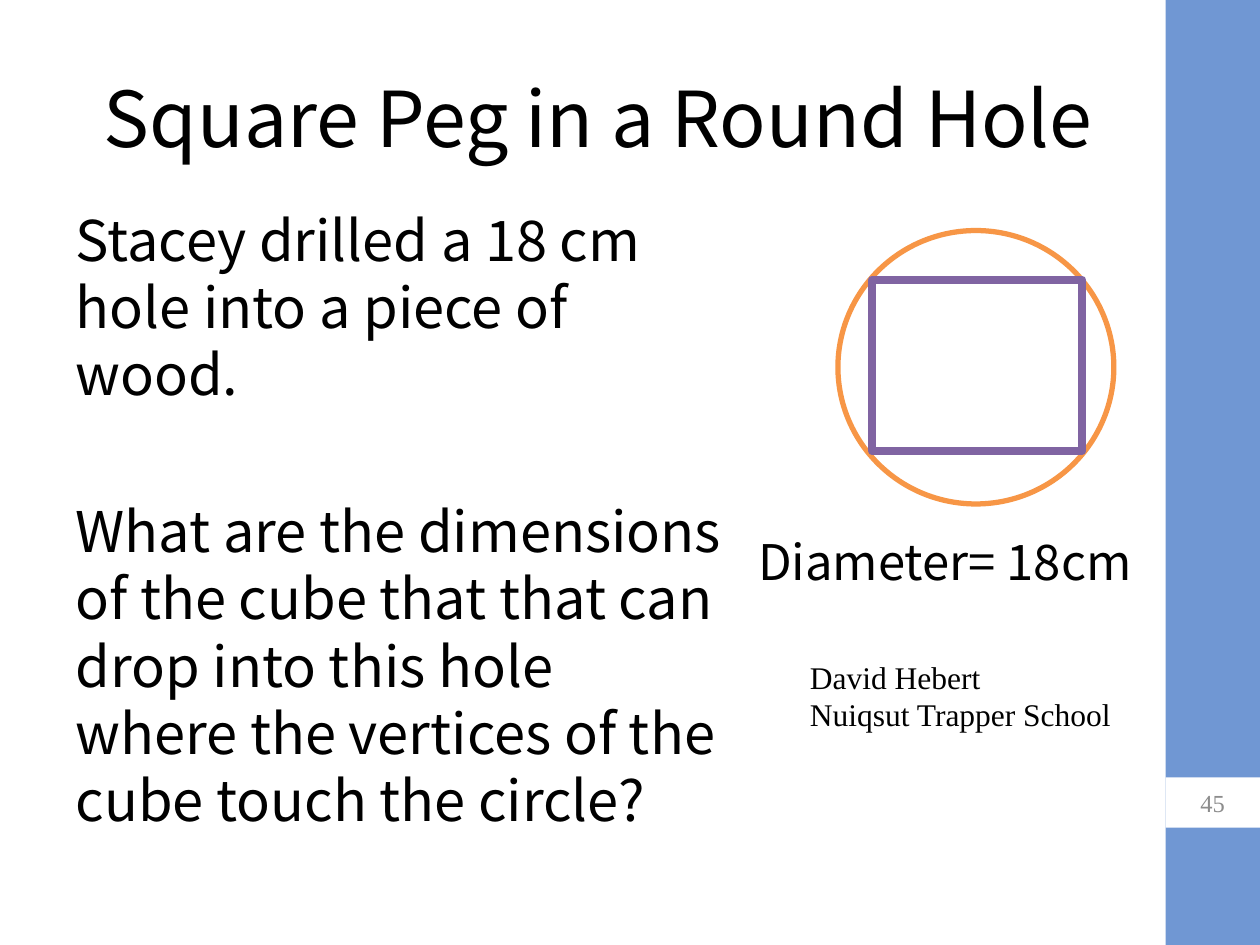
from pptx import Presentation
from pptx.dml.color import RGBColor
from pptx.enum.shapes import MSO_SHAPE
from pptx.enum.text import MSO_ANCHOR, MSO_AUTO_SIZE, PP_ALIGN
from pptx.util import Inches, Pt

SANS, SERIF = "Noto Sans CJK TC", "Times New Roman"
TITLE = "Square Peg in a Round Hole"
PROBLEM = [
    "Stacey drilled a 18 cm hole into a piece of wood.",
    "What are the dimensions of the cube that that can drop into this hole "
    "where the vertices of the cube touch the circle?",
]
CREDIT = ["David Hebert", "Nuiqsut Trapper School"]
LINE_HEIGHT = 1.2  # times the text size
PARAGRAPH_GAP = 51.2  # points
SIDEBAR_LEFT, SIDEBAR_WIDTH = 9.25, 0.75


def color(value):
    return RGBColor.from_string(value)


def place(shape, box):
    for name, value in zip(("left", "top", "width", "height"), box):
        setattr(shape, name, Inches(value))


def write(shape, lines, size, font, ink="000000", align=PP_ALIGN.LEFT,
          anchor=MSO_ANCHOR.TOP, gap=0):
    frame = shape.text_frame
    frame.text = "\n".join(lines)
    frame.word_wrap = True
    frame.auto_size = MSO_AUTO_SIZE.NONE
    frame.vertical_anchor = anchor
    for index, paragraph in enumerate(frame.paragraphs):
        layout = {"alignment": align, "space_before": Pt(gap if index else 0)}
        if font == SANS:
            layout["line_spacing"] = Pt(size * LINE_HEIGHT)
        for name, value in layout.items():
            setattr(paragraph, name, value)
        run_font = paragraph.runs[0].font
        run_font.name, run_font.size = font, Pt(size)
        run_font.color.rgb = color(ink)


def add_shape(slide, kind, box, fill, line=None, width=0):
    shape = slide.shapes.add_shape(kind, *map(Inches, box))
    shape.shadow.inherit = False
    shape.fill.solid()
    shape.fill.fore_color.rgb = color(fill)
    if line:
        shape.line.color.rgb = color(line)
        shape.line.width = Pt(width)
    else:
        shape.line.fill.background()
    return shape


def add_text(slide, box, *content):
    write(slide.shapes.add_textbox(*map(Inches, box)), *content)


def remove_bullets(shape):
    for paragraph in shape.text_frame.paragraphs:
        properties = paragraph._p.get_or_add_pPr()
        properties.set("marL", "0")
        properties.set("indent", "0")
        bullet = properties.makeelement(
            "{http://schemas.openxmlformats.org/drawingml/2006/main}buNone", {})
        properties.append(bullet)


def main():
    presentation = Presentation()
    presentation.slide_width, presentation.slide_height = Inches(10), Inches(7.5)
    slide = presentation.slides.add_slide(presentation.slide_layouts[1])

    add_shape(slide, MSO_SHAPE.RECTANGLE,
              (SIDEBAR_LEFT, 0, SIDEBAR_WIDTH, 7.5), "7097D3")
    page_number = add_shape(slide, MSO_SHAPE.RECTANGLE,
                            (SIDEBAR_LEFT, 6.17, SIDEBAR_WIDTH, 0.4), "FFFFFF")
    write(page_number, ["45"], 14, SERIF, "8C8C8C", PP_ALIGN.CENTER,
          MSO_ANCHOR.MIDDLE)

    title, body = slide.placeholders
    place(title, (0.5, 0.3, 8.5, 1.25))
    write(title, [TITLE], 44, SANS, align=PP_ALIGN.CENTER,
          anchor=MSO_ANCHOR.MIDDLE)
    place(body, (0.5, 1.58, 5.33, 5.42))
    write(body, PROBLEM, 32, SANS, gap=PARAGRAPH_GAP)
    remove_bullets(body)

    add_shape(slide, MSO_SHAPE.OVAL, (6.65, 1.83, 2.19, 2.17),
              "FFFFFF", "F79646", 3)
    add_shape(slide, MSO_SHAPE.RECTANGLE, (6.92, 2.22, 1.67, 1.36),
              "FFFFFF", "8064A2", 4.5)
    add_text(slide, (5.92, 4.17, 3.33, 0.57), ["Diameter= 18cm"], 28, SANS)
    add_text(slide, (6.33, 5.17, 2.92, 0.71), CREDIT, 18, SERIF)
    presentation.save("out.pptx")


if __name__ == "__main__":
    main()
